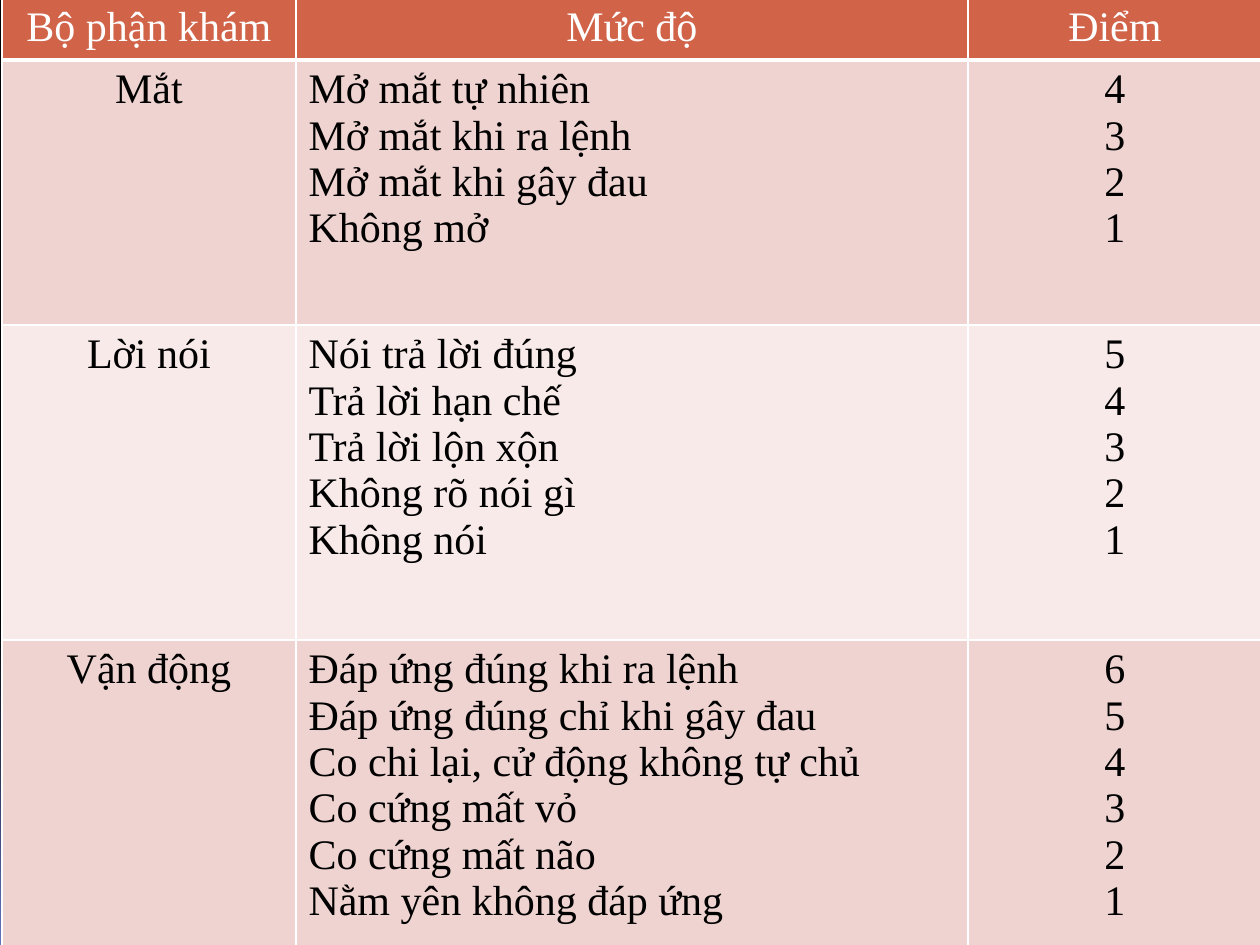
from lxml import etree
from pptx import Presentation
from pptx.dml.color import RGBColor
from pptx.enum.text import PP_ALIGN
from pptx.oxml.ns import qn
from pptx.util import Pt

CENTER, LEFT = PP_ALIGN.CENTER, PP_ALIGN.LEFT
EMU_PER_PX = 914400 / 126
FONT_NAME = "Times New Roman"
FONT_SIZE = 24
COLORS = {
    "black": "000000",
    "blue": "6274BE",
    "white": "FFFFFF",
    "header": "D16349",
    "band_dark": "EED3D0",
    "band_light": "F7EAE9",
}
COLUMN_WIDTHS = [294, 672, 294]
COLUMN_ALIGNMENTS = [CENTER, LEFT, CENTER]
ROW_HEIGHTS = [62, 265, 315, 327]
HEADINGS = ["Bộ phận khám", "Mức độ", "Ðiểm"]
EXAMINATIONS = {
    "Mắt": [
        "Mở mắt tự nhiên",
        "Mở mắt khi ra lệnh",
        "Mở mắt khi gây đau",
        "Không mở",
    ],
    "Lời nói": [
        "Nói trả lời đúng",
        "Trả lời hạn chế",
        "Trả lời lộn xộn",
        "Không rõ nói gì",
        "Không nói",
    ],
    "Vận động": [
        "Ðáp ứng đúng khi ra lệnh",
        "Ðáp ứng đúng chỉ khi gây đau",
        "Co chi lại, cử động không tự chủ",
        "Co cứng mất vỏ",
        "Co cứng mất não",
        "Nằm yên không đáp ứng",
    ],
}


def px(length):
    return round(length * EMU_PER_PX)


def color(name):
    return RGBColor.from_string(COLORS[name])


def set_background(slide):
    """Black down to 65 % of the height, then fading to blue."""
    fill = slide.background.fill
    fill.gradient()
    fill.gradient_angle = 270
    for stop, name, position in zip(fill.gradient_stops, ["black", "blue"], [0.65, 1]):
        stop.color.rgb = color(name)
        stop.position = position


def set_borders(cell, bottom_width):
    properties = cell._tc.get_or_add_tcPr()
    widths = {"a:lnL": 1, "a:lnR": 1, "a:lnT": 1, "a:lnB": bottom_width}
    for index, (tag, width) in enumerate(widths.items()):
        line = etree.Element(qn(tag), w=str(Pt(width)))
        solid_fill = etree.SubElement(line, qn("a:solidFill"))
        etree.SubElement(solid_fill, qn("a:srgbClr"), val=COLORS["white"])
        properties.insert(index, line)


def fill_cell(cell, text, alignment, fill_name, text_name, bottom_width):
    cell.fill.solid()
    cell.fill.fore_color.rgb = color(fill_name)
    set_borders(cell, bottom_width)
    cell.text_frame.text = text
    for paragraph in cell.text_frame.paragraphs:
        paragraph.alignment = alignment
        for run in paragraph.runs:
            run.font.name = FONT_NAME
            run.font.size = Pt(FONT_SIZE)
            run.font.bold = False
            run.font.color.rgb = color(text_name)


def score_rows():
    """Each level scores one point less than the level above it, down to 1."""
    rows = []
    for part, levels in EXAMINATIONS.items():
        scores = [str(score) for score in range(len(levels), 0, -1)]
        rows.append([part, "\n".join(levels), "\n".join(scores)])
    return rows


def add_score_table(slide):
    rows = [HEADINGS] + score_rows()
    table = slide.shapes.add_table(
        len(rows), len(HEADINGS), px(2), px(-2),
        px(sum(COLUMN_WIDTHS)), px(sum(ROW_HEIGHTS)),
    ).table
    for column, width in zip(table.columns, COLUMN_WIDTHS):
        column.width = px(width)
    for row_index, texts in enumerate(rows):
        row = table.rows[row_index]
        row.height = px(ROW_HEIGHTS[row_index])
        is_header = row_index == 0
        band = "band_dark" if row_index % 2 else "band_light"
        for cell, text, alignment in zip(row.cells, texts, COLUMN_ALIGNMENTS):
            fill_cell(
                cell, text,
                alignment=CENTER if is_header else alignment,
                fill_name="header" if is_header else band,
                text_name="white" if is_header else "black",
                bottom_width=3 if is_header else 1,
            )
    # The first body row shares its top edge with the header's thick rule.
    for cell in table.rows[1].cells:
        cell._tc.tcPr.find(qn("a:lnT")).set("w", str(Pt(3)))


def main():
    presentation = Presentation()
    presentation.slide_width = px(1260)
    presentation.slide_height = px(945)
    slide = presentation.slides.add_slide(presentation.slide_layouts[6])
    set_background(slide)
    add_score_table(slide)
    presentation.save("out.pptx")


if __name__ == "__main__":
    main()
